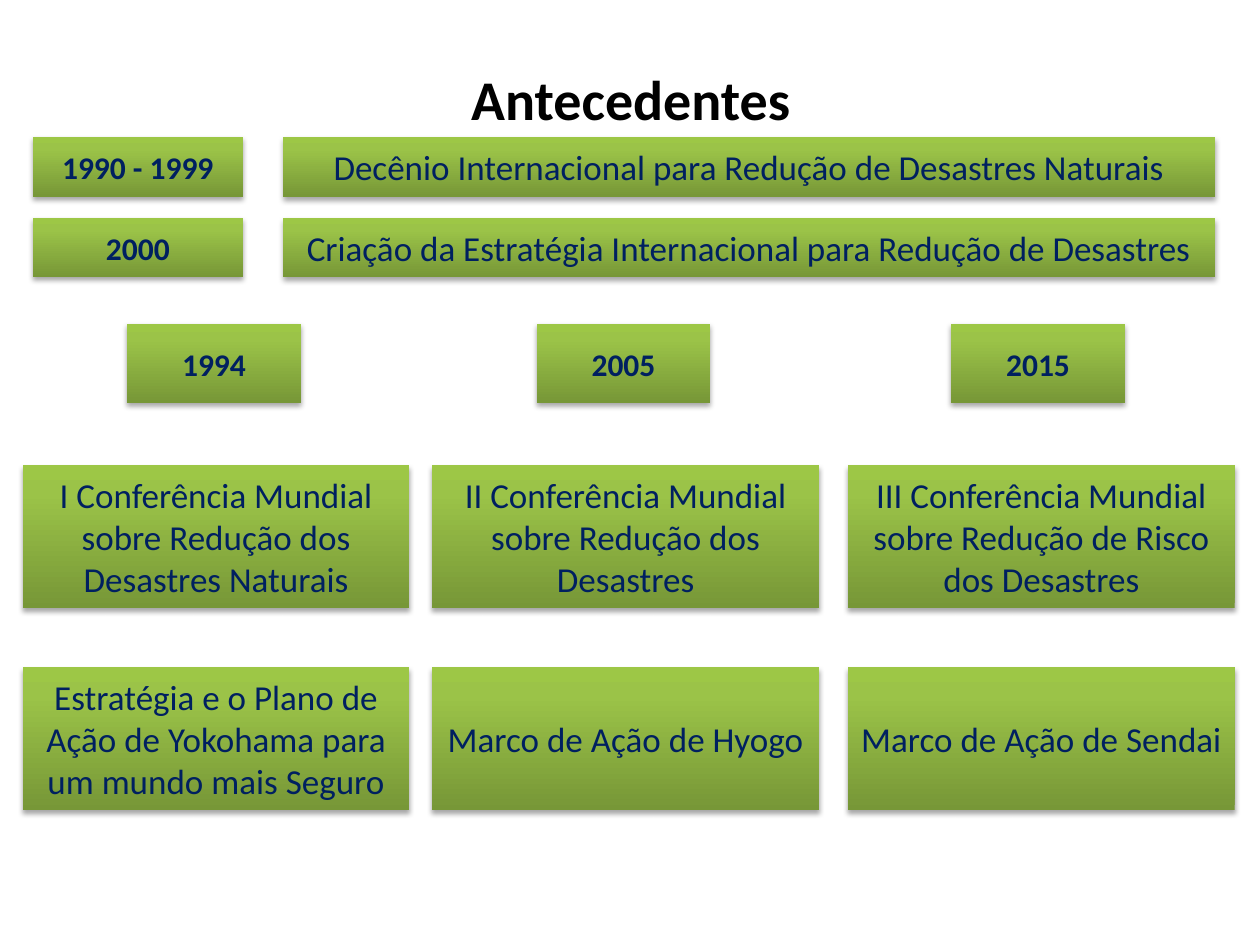
from copy import deepcopy

from lxml.etree import SubElement
from pptx import Presentation
from pptx.dml.color import RGBColor
from pptx.enum.shapes import MSO_SHAPE as SHAPE
from pptx.enum.text import MSO_ANCHOR as ANCHOR, MSO_AUTO_SIZE as AUTO_SIZE, PP_ALIGN as ALIGN
from pptx.oxml.ns import qn
from pptx.util import Pt

COLORS = {"dark": "779737", "mid": "9BC348", "light": "9DC746",
          "navy": "002060", "black": "000000"}
GRADIENT = [(0, "dark"), (0.8, "mid"), (1, "light")]

TITLE = {"size": Pt(32), "bold": True}
YEAR = {"size": Pt(18), "bold": True}
BODY = {"size": Pt(20), "bold": False}

PERIODS = [
    ("1990 - 1999", "Decênio Internacional para Redução de Desastres Naturais"),
    ("2000", "Criação da Estratégia Internacional para Redução de Desastres"),
]
# Column left, year left, year, conference, outcome
CONFERENCES = [
    (13, 72.7, "1994", "I Conferência Mundial sobre Redução dos Desastres Naturais",
     "Estratégia e o Plano de Ação de Yokohama para um mundo mais Seguro"),
    (247, 306.7, "2005", "II Conferência Mundial sobre Redução dos Desastres",
     "Marco de Ação de Hyogo"),
    (484.6, 543.6, "2015", "III Conferência Mundial sobre Redução de Risco dos Desastres",
     "Marco de Ação de Sendai"),
]


def color(name):
    return RGBColor.from_string(COLORS[name])


def write(shape, text, style, ink, anchor):
    frame = shape.text_frame
    frame.word_wrap = True
    frame.auto_size = AUTO_SIZE.NONE
    frame.vertical_anchor = anchor
    para = frame.paragraphs[0]
    para.alignment = ALIGN.CENTER
    span = para.add_run()
    span.text = text
    for name, value in {"name": "Calibri", **style}.items():
        setattr(span.font, name, value)
    span.font.color.rgb = color(ink)


def add_gradient(box):
    box.fill.gradient()
    stops = box._element.spPr.find(".//" + qn("a:gsLst"))
    stops.append(deepcopy(stops[-1]))
    for stop, (position, name) in zip(box.fill.gradient_stops, GRADIENT):
        stop.position = position
        stop.color.rgb = color(name)
    box.fill.gradient_angle = 90


def add_shadow(box):
    box.shadow.inherit = False
    effects = box._element.spPr.find(qn("a:effectLst"))
    shadow = SubElement(effects, qn("a:outerShdw"), blurRad=str(Pt(3.1)),
                        dist=str(Pt(1.8)), dir="5400000", rotWithShape="0")
    tint = SubElement(shadow, qn("a:srgbClr"), val=COLORS["black"])
    SubElement(tint, qn("a:alpha"), val="35000")


def add_box(page, text, style, left, top, width, height):
    box = page.shapes.add_shape(SHAPE.RECTANGLE, Pt(left), Pt(top), Pt(width), Pt(height))
    add_gradient(box)
    box.line.fill.background()
    add_shadow(box)
    write(box, text, style, "navy", ANCHOR.MIDDLE)


def add_title(page, text):
    title = page.shapes.title
    place = {"left": 36.5, "top": 33, "width": 648, "height": 45}
    for name, value in place.items():
        setattr(title, name, Pt(value))
    write(title, text, TITLE, "black", ANCHOR.TOP)


def main():
    deck = Presentation()
    deck.slide_width, deck.slide_height = Pt(720), Pt(540)
    page = deck.slides.add_slide(deck.slide_layouts[5])
    add_title(page, "Antecedentes")

    # Periods with their milestones
    for row, (years, milestone) in enumerate(PERIODS):
        top = 78.4 + row * 46
        add_box(page, years, YEAR, 18.8, top, 120, 34)
        add_box(page, milestone, BODY, 161.5, top, 532.8, 34)

    # One column per conference
    for left, year_left, year, conference, outcome in CONFERENCES:
        add_box(page, year, YEAR, year_left, 185, 99.2, 45.4)
        add_box(page, conference, BODY, left, 266, 221, 81.4)
        add_box(page, outcome, BODY, left, 381.4, 221, 81.4)

    deck.save("out.pptx")


if __name__ == "__main__":
    main()
